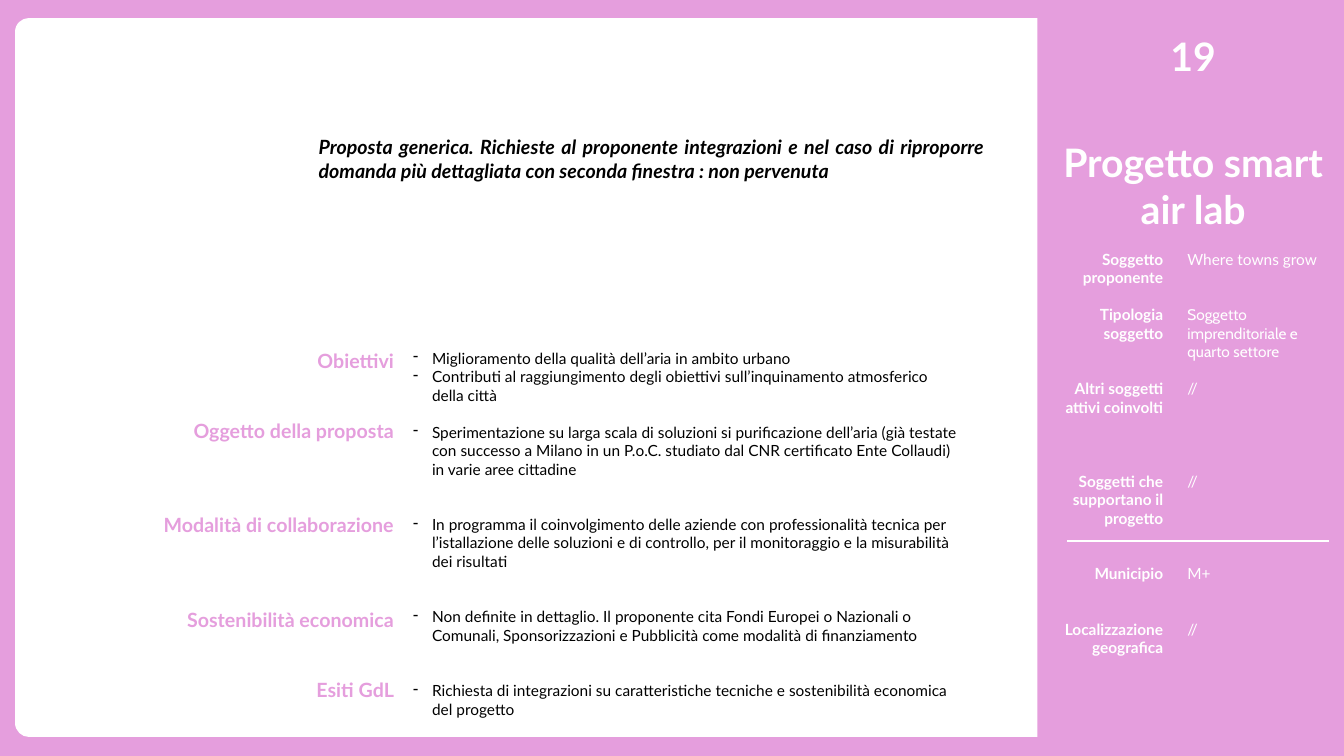
from lxml import etree
from pptx import Presentation
from pptx import util as u
from pptx.dml.color import RGBColor
from pptx.enum import shapes, text
from pptx.oxml import ns

PINK = RGBColor(0xE5, 0x9E, 0xDD)
WHITE = RGBColor(0xFF, 0xFF, 0xFF)
BLACK = RGBColor(0, 0, 0)
LEFT, RIGHT = text.PP_ALIGN.LEFT, text.PP_ALIGN.RIGHT
CENTER, JUSTIFY = text.PP_ALIGN.CENTER, text.PP_ALIGN.JUSTIFY


class Sheet:
    FONT = "Lato"
    LINE = 1.2  # line pitch relative to the type size
    HANG = 13.5

    def __init__(self, prs):
        self.s = prs.slides.add_slide(prs.slide_layouts[6])

    def panel(self, x, y, w, h, color, border=0):
        sp = self.s.shapes.add_shape(shapes.MSO_SHAPE.RECTANGLE,
                                     u.Pt(x), u.Pt(y), u.Pt(w), u.Pt(h))
        sp.shadow.inherit = False
        sp.fill.solid()
        sp.fill.fore_color.rgb = color
        if border:
            sp.line.color.rgb = color
            sp.line.width = u.Pt(border)
        else:
            sp.line.fill.background()

    def rule(self, x1, x2, y, color, width):
        c = self.s.shapes.add_connector(shapes.MSO_CONNECTOR.STRAIGHT,
                                        u.Pt(x1), u.Pt(y), u.Pt(x2), u.Pt(y))
        c.line.color.rgb = color
        c.line.width = u.Pt(width)
        etree.SubElement(c._element.spPr, ns.qn("a:effectLst"))

    def dash(self, p):
        pPr = p._p.get_or_add_pPr()
        pPr.set("marL", str(u.Pt(self.HANG)))
        pPr.set("indent", str(-u.Pt(self.HANG)))
        etree.SubElement(pPr, ns.qn("a:buChar")).set("char", "-")

    def text(self, x, y, w, h, entries, size, color, align=LEFT,
             bold=False, italic=False, dashed=False):
        """Each entry is (lines of space before, wording[, font])."""
        tf = self.s.shapes.add_textbox(u.Pt(x), u.Pt(y), u.Pt(w), u.Pt(h)).text_frame
        tf.word_wrap = True
        for i, (gap, words, *font) in enumerate(entries):
            p = tf.add_paragraph() if i else tf.paragraphs[0]
            p.alignment = align
            if dashed:
                self.dash(p)
            if gap:
                p.space_before = u.Pt(round(gap * size * self.LINE, 1))
            r = p.add_run()
            r.text = words
            r.font.name = font[0] if font else self.FONT
            r.font.size = u.Pt(size)
            r.font.bold = bold
            r.font.italic = italic
            r.font.color.rgb = color


def main():
    prs = Presentation()
    prs.slide_width, prs.slide_height = u.Pt(960), u.Pt(540)
    sheet = Sheet(prs)

    # Frame and side panel
    sheet.panel(-8, -12, 979, 564, PINK)
    sheet.panel(21, 22.5, 915, 494, WHITE, border=20)
    sheet.panel(741, 5, 208, 528.5, PINK)

    # Number and title
    sheet.text(739.5, 19.5, 225.5, 166, [(0, "19"), (1.25, "Progetto smart air lab")],
               28, WHITE, CENTER, bold=True)

    # Project data
    sheet.text(741, 175, 97, 380, [
        (0, "Soggetto proponente"),
        (1, "Tipologia soggetto"),
        (2, "Altri soggetti attivi coinvolti"),
        (3, "Soggetti che supportano il progetto"),
        (2, "Municipio"),
        (2, "Localizzazione geografica"),
    ], 11, WHITE, RIGHT, bold=True)
    sheet.text(841, 175, 123, 287, [
        (0, "Where towns grow"),
        (2, "Soggetto imprenditoriale e quarto settore", "Cabin"),
        (1, "//"),
        (4, "//"),
        (4, "M+"),
        (2, "//"),
    ], 11, WHITE)
    sheet.rule(762, 949, 386.5, WHITE, 1.5)

    # Proposal details
    sheet.text(288, 245.5, 403, 287, [
        (0, "Miglioramento della qualità dell’aria in ambito urbano"),
        (0, "Contributi al raggiungimento degli obiettivi sull’inquinamento "
            "atmosferico della città"),
        (1, "Sperimentazione su larga scala di soluzioni si purificazione dell’aria "
            "(già testate con successo a Milano in un P.o.C. studiato dal CNR "
            "certificato Ente Collaudi) in varie aree cittadine"),
        (2, "In programma il coinvolgimento delle aziende con professionalità tecnica "
            "per l’istallazione delle soluzioni e di controllo, per il monitoraggio "
            "e la misurabilità dei risultati"),
        (2, "Non definite in dettaglio. Il proponente cita Fondi Europei o Nazionali o "
            "Comunali, Sponsorizzazioni e Pubblicità come modalità di finanziamento"),
        (2, "Richiesta di integrazioni su caratteristiche tecniche e sostenibilità "
            "economica del progetto"),
    ], 11, BLACK, dashed=True)
    sheet.text(68.5, 245.5, 220, 262, [
        (0, "Obiettivi"),
        (2, "Oggetto della proposta"),
        (3, "Modalità di collaborazione"),
        (3, "Sostenibilità economica"),
        (2, "Esiti GdL"),
    ], 14, PINK, RIGHT, bold=True)

    # Assessment
    sheet.text(220.5, 93, 490, 41, [
        (0, "Proposta generica. Richieste al proponente integrazioni e nel caso di "
            "riproporre domanda più dettagliata con seconda finestra : non pervenuta"),
    ], 14, BLACK, JUSTIFY, bold=True, italic=True)

    prs.save("out.pptx")


if __name__ == "__main__":
    main()
